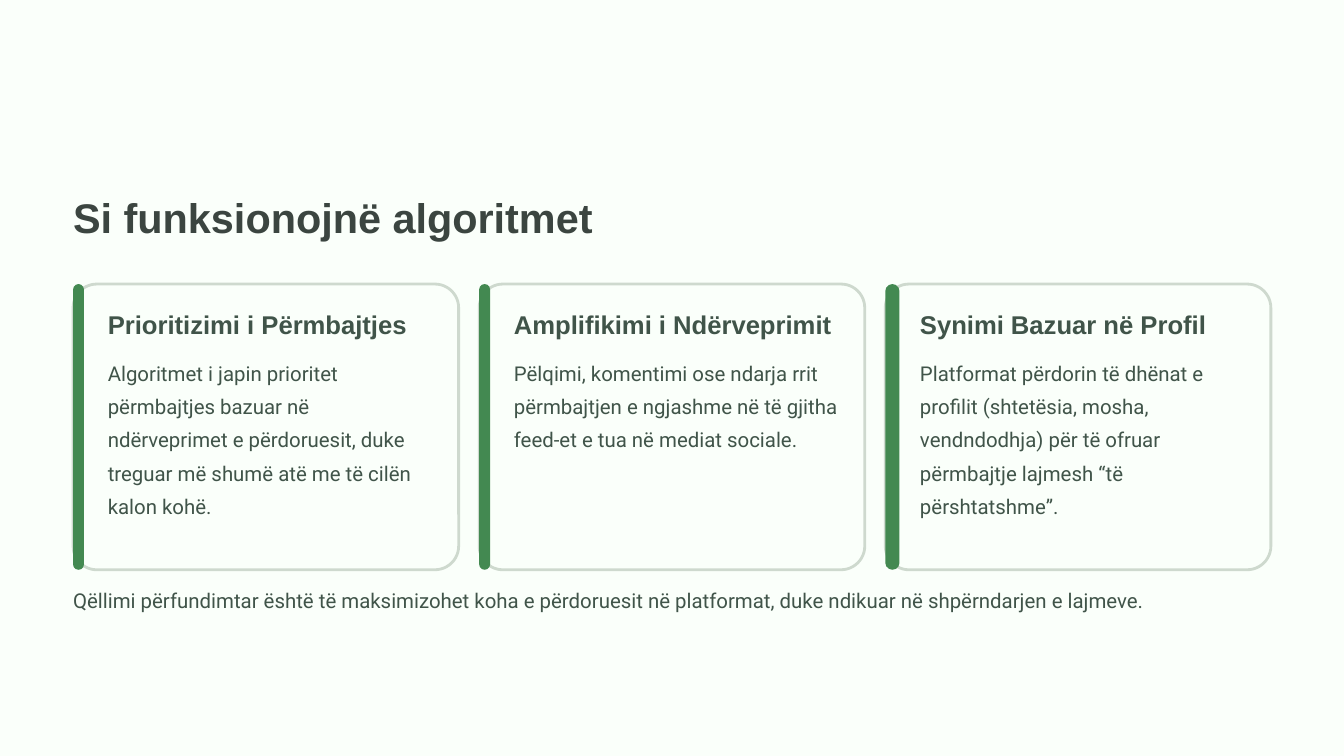
import pptx
import pptx.util
import pptx.dml.color
import pptx.enum.shapes
import pptx.enum.text

Cm = pptx.util.Cm
Pt = pptx.util.Pt

COLOURS = {
    "background": "FAFFFA",
    "title": "3B4540",
    "text": "405449",
    "border": "CED9CE",
    "accent": "438951",
}

MARGIN = 2.21
CONTENT_WIDTH = 36.22
CARD_TOP = 8.59
CARD_WIDTH = 11.66
CARD_HEIGHT = 8.64
CARD_PITCH = (CONTENT_WIDTH - CARD_WIDTH) / 2
TEXT_INSET = 1.05
TEXT_WIDTH = 9.88

CARDS = [
    (
        "Prioritizimi i Përmbajtjes",
        "Algoritmet i japin prioritet përmbajtjes bazuar në ndërveprimet "
        "e përdoruesit, duke treguar më shumë atë me të cilën kalon kohë.",
        0.33,
    ),
    (
        "Amplifikimi i Ndërveprimit",
        "Pëlqimi, komentimi ose ndarja rrit përmbajtjen e ngjashme në të "
        "gjitha feed-et e tua në mediat sociale.",
        0.33,
    ),
    (
        "Synimi Bazuar në Profil",
        "Platformat përdorin të dhënat e profilit (shtetësia, mosha, "
        "vendndodhja) për të ofruar përmbajtje lajmesh “të përshtatshme”.",
        0.43,
    ),
]


class SlideBuilder:
    """Hold the slide and its style, and draw each kind of element."""

    def __init__(self, slide, colours):
        self.slide = slide
        self.colours = colours

    def colour(self, name):
        return pptx.dml.color.RGBColor.from_string(self.colours[name])

    def background(self, name):
        fill = self.slide.background.fill
        fill.solid()
        fill.fore_color.rgb = self.colour(name)

    def rounded_box(self, left, top, width, height, fill, rounding, border=None):
        shape = self.slide.shapes.add_shape(
            pptx.enum.shapes.MSO_SHAPE.ROUNDED_RECTANGLE,
            Cm(left), Cm(top), Cm(width), Cm(height),
        )
        shape.shadow.inherit = False
        shape.adjustments[0] = rounding
        shape.fill.solid()
        shape.fill.fore_color.rgb = self.colour(fill)
        if border:
            shape.line.color.rgb = self.colour(border)
            shape.line.width = Pt(2.4)
        else:
            shape.line.fill.background()

    def text(self, content, left, top, width, height, size, spacing,
             font="Roboto", colour="text", bold=False):
        box = self.slide.shapes.add_textbox(Cm(left), Cm(top), Cm(width), Cm(height))
        frame = box.text_frame
        frame.margin_left = frame.margin_right = 0
        frame.margin_top = frame.margin_bottom = 0
        frame.word_wrap = True
        frame.text = content
        paragraph = frame.paragraphs[0]
        paragraph.alignment = pptx.enum.text.PP_ALIGN.LEFT
        paragraph.line_spacing = Pt(spacing)
        run = paragraph.runs[0]
        run.font.name = font
        run.font.size = Pt(size)
        run.font.bold = bold
        run.font.color.rgb = self.colour(colour)

    def card(self, left, heading, body, bar_width):
        self.rounded_box(left, CARD_TOP, CARD_WIDTH, CARD_HEIGHT,
                         "background", 0.083, "border")
        self.rounded_box(left, CARD_TOP, bar_width, CARD_HEIGHT, "accent", 0.5)
        text_left = left + TEXT_INSET
        self.text(heading, text_left, 9.3, TEXT_WIDTH, 0.99, 22, 27.5,
                  font="Arial", bold=True)
        self.text(body, text_left, 10.65, TEXT_WIDTH, 5.03, 17.5, 28.5)


def main():
    presentation = pptx.Presentation()
    presentation.slide_width = Cm(40.64)
    presentation.slide_height = Cm(22.86)
    slide = presentation.slides.add_slide(presentation.slide_layouts[6])
    builder = SlideBuilder(slide, COLOURS)

    builder.background("background")
    builder.text("Si funksionojnë algoritmet", MARGIN, 5.74, 17, 1.57, 35.5, 44.5,
                 font="Arial", colour="title", bold=True)
    for index, (heading, body, bar_width) in enumerate(CARDS):
        builder.card(MARGIN + index * CARD_PITCH, heading, body, bar_width)
    builder.text(
        "Qëllimi përfundimtar është të maksimizohet koha e përdoruesit në "
        "platformat, duke ndikuar në shpërndarjen e lajmeve.",
        MARGIN, 17.51, CONTENT_WIDTH, 1.02, 17.5, 28.5,
    )
    presentation.save("out.pptx")


if __name__ == "__main__":
    main()
